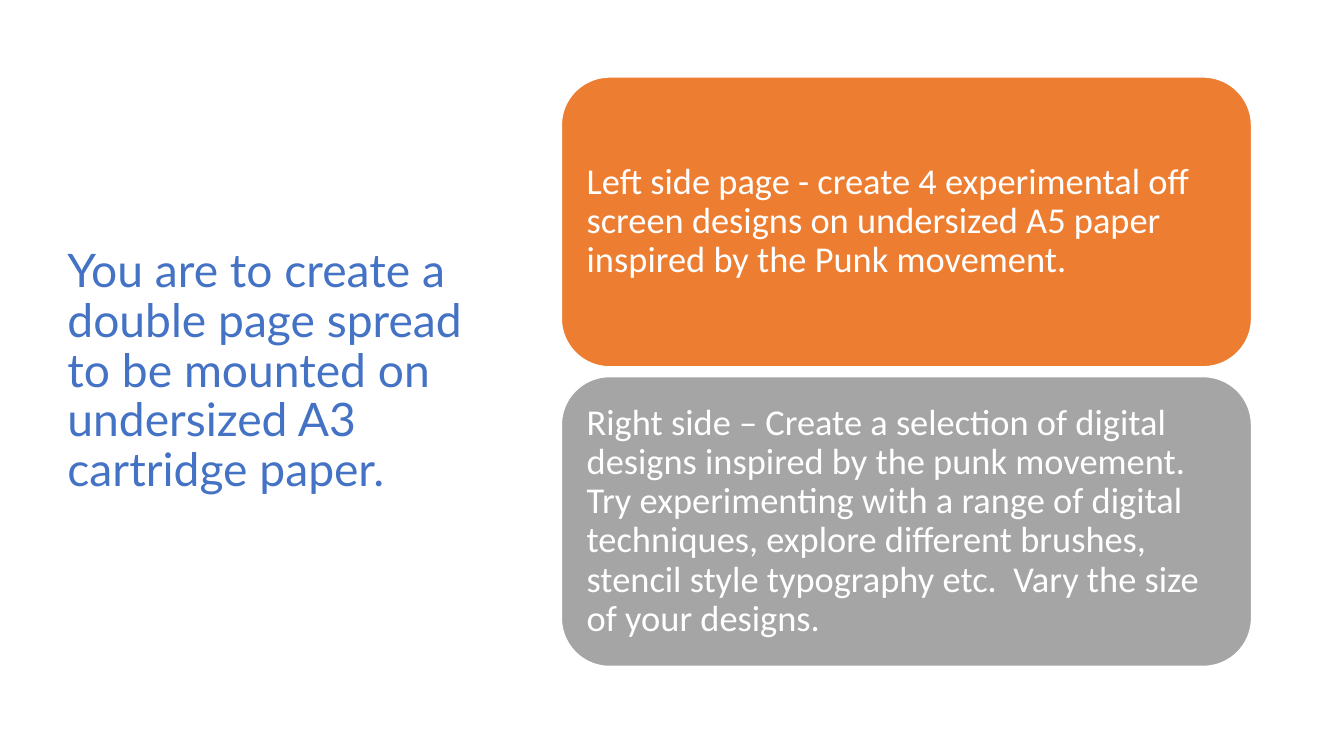
from pptx import Presentation
from pptx.dml.color import RGBColor
from pptx.enum.shapes import MSO_SHAPE as SHAPE
from pptx.enum.text import MSO_ANCHOR as ANCHOR, MSO_AUTO_SIZE as AUTO, PP_ALIGN as ALIGN
from pptx.util import Pt

BLUE = RGBColor(0x44, 0x72, 0xC4)
ORANGE = RGBColor(0xED, 0x7D, 0x31)
GREY = RGBColor(0xA5, 0xA5, 0xA5)
WHITE = RGBColor(0xFF, 0xFF, 0xFF)

TITLE = "You are to create a double page spread to be mounted on undersized A3 cartridge paper."
CARDS = [
    (ORANGE, "Left side page - create 4 experimental off screen designs on "
             "undersized A5 paper inspired by the Punk movement."),
    (GREY, "Right side – Create a selection of digital designs inspired by the punk "
           "movement. Try experimenting with a range of digital techniques, explore "
           "different brushes, stencil style typography etc.  Vary the size of your designs."),
]


def set_attrs(obj, values):
    for name, value in values.items():
        setattr(obj, name, value)


def write(sp, text, margins, font, color):
    """Fill a shape with one left-aligned, vertically centred paragraph."""
    tf = sp.text_frame
    set_attrs(tf, {"word_wrap": True, "auto_size": AUTO.NONE,
                   "vertical_anchor": ANCHOR.MIDDLE, **margins})
    p = tf.paragraphs[0]
    set_attrs(p, {"alignment": ALIGN.LEFT, "line_spacing": 0.9})
    r = p.add_run()
    r.text = text
    set_attrs(r.font, font)
    r.font.color.rgb = color


def add_title(slide, left, top, width, height):
    sp = slide.shapes.title
    set_attrs(sp, {"left": Pt(left), "top": Pt(top),
                   "width": Pt(width), "height": Pt(height)})
    write(sp, TITLE, {}, {"name": "Lato", "size": Pt(33)}, BLUE)


def add_cards(slide, left, top, width, height, gap=7):
    """Stack the cards at equal heights within the box."""
    card_height = (height - gap * (len(CARDS) - 1)) / len(CARDS)
    margins = {f"margin_{side}": Pt(8) for side in ("left", "top", "right", "bottom")}
    for i, (fill, text) in enumerate(CARDS):
        sp = slide.shapes.add_shape(
            SHAPE.ROUNDED_RECTANGLE, Pt(left), Pt(top + i * (card_height + gap)),
            Pt(width), Pt(card_height))
        sp.shadow.inherit = False
        sp.fill.solid()
        sp.fill.fore_color.rgb = fill
        sp.line.color.rgb = WHITE
        sp.line.width = Pt(1)
        write(sp, text, margins, {"name": "Calibri", "size": Pt(26)}, WHITE)


def main():
    prs = Presentation()
    prs.slide_width, prs.slide_height = Pt(960), Pt(540)
    slide = prs.slides.add_slide(prs.slide_layouts[5])
    add_title(slide, 41, 49, 299.5, 433.5)
    add_cards(slide, 401, 55, 493, 421)
    prs.save("out.pptx")


if __name__ == "__main__":
    main()
